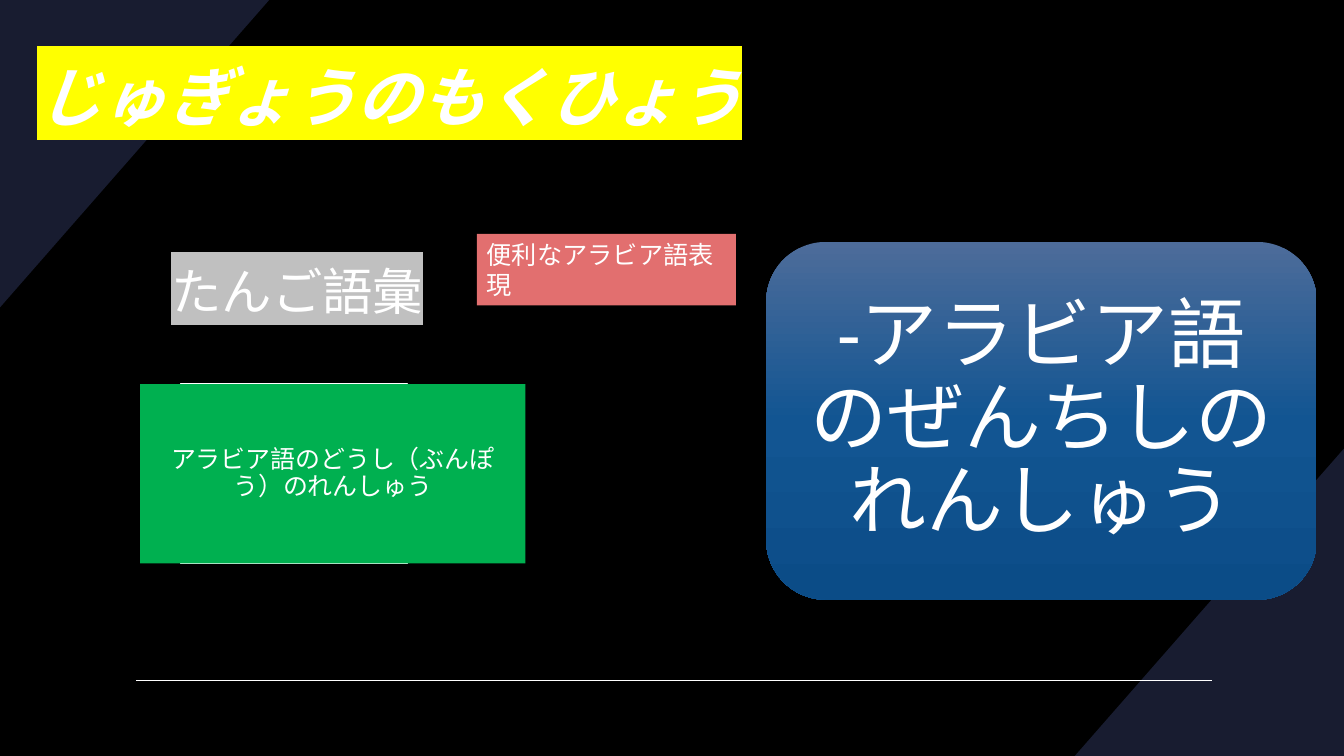
from copy import deepcopy

from lxml.etree import SubElement
from pptx import Presentation
from pptx.dml.color import RGBColor
from pptx.enum.shapes import MSO_CONNECTOR, MSO_SHAPE
from pptx.enum.text import MSO_ANCHOR, MSO_AUTO_SIZE, PP_ALIGN
from pptx.oxml.ns import qn
from pptx.util import Inches, Pt

BLACK = RGBColor(0x00, 0x00, 0x00)
WHITE = RGBColor(0xFF, 0xFF, 0xFF)
NAVY = RGBColor(0x18, 0x1C, 0x30)
GREEN = RGBColor(0x00, 0xB0, 0x50)
CORAL = RGBColor(0xE2, 0x6F, 0x6F)
YELLOW = RGBColor(0xFF, 0xFF, 0x00)
SILVER = RGBColor(0xC0, 0xC0, 0xC0)
BLUES = [(0, RGBColor(0x4D, 0x6C, 0x9A)),
         (0.5, RGBColor(0x12, 0x55, 0x92)),
         (1, RGBColor(0x0B, 0x4C, 0x87))]

GOAL = "じゅぎょうのもくひょう"
VOCABULARY = "たんご語彙"
PHRASES = "便利なアラビア語表現"
VERBS = "アラビア語のどうし（ぶんぽう）のれんしゅう"
PREPOSITIONS = "-アラビア語のぜんちしのれんしゅう"

WIDTH, HEIGHT = 13.33, 7.5
CORNER_W, CORNER_H = 2.67, 3.05

GOAL_BOX = (0.27, 0.2, 7.28, 1.59)
VOCABULARY_BOX = (1.6, 2.53, 2.96, 0.71)
PHRASES_BOX = (4.73, 2.32, 2.57, 0.71)
VERBS_BACK_BOX = (1.79, 3.81, 2.25, 1.78)
VERBS_BOX = (1.39, 3.81, 3.82, 1.78)
PREPOSITIONS_BOX = (7.6, 2.4, 5.46, 3.55)


def inches(box):
    return [Inches(length) for length in box]


def add_corner(slide, corner, along, down):
    points = [(Inches(x), Inches(y)) for x, y in (corner, along, down)]
    builder = slide.shapes.build_freeform(*points[0], scale=1.0)
    builder.add_line_segments(points[1:], close=True)
    triangle = builder.convert_to_shape()
    triangle.shadow.inherit = False
    triangle.fill.solid()
    triangle.fill.fore_color.rgb = NAVY
    triangle.line.fill.background()


def add_panel(slide, box, color=None, preset=MSO_SHAPE.RECTANGLE):
    panel = slide.shapes.add_shape(preset, *inches(box))
    panel.shadow.inherit = False
    if color is not None:
        panel.fill.solid()
        panel.fill.fore_color.rgb = color
    panel.line.fill.background()
    return panel


def write(shape, text, size, align=PP_ALIGN.LEFT, anchor=MSO_ANCHOR.TOP,
          inset=None, spacing=None):
    frame = shape.text_frame
    frame.word_wrap = True
    frame.auto_size = MSO_AUTO_SIZE.NONE
    frame.vertical_anchor = anchor
    if inset is not None:
        frame.margin_left = frame.margin_right = Inches(inset)
        frame.margin_top = frame.margin_bottom = Inches(inset)
    frame.text = text
    paragraph = frame.paragraphs[0]
    paragraph.alignment = align
    paragraph.line_spacing = spacing
    paragraph.font.name = "Calibri"
    paragraph.font.size = Pt(size)
    paragraph.font.color.rgb = WHITE
    return paragraph


def highlight(paragraph, color):
    properties = paragraph.runs[0].font._element
    marker = SubElement(properties, qn("a:highlight"))
    SubElement(marker, qn("a:srgbClr")).set("val", str(color))


def shade(panel, stops):
    """Fill the panel with a gradient running from top to bottom."""
    panel.fill.gradient()
    panel.fill.gradient_angle = 270
    first = panel.fill.gradient_stops[0]._gs
    first.addnext(deepcopy(first))
    for stop, (position, color) in zip(panel.fill.gradient_stops, stops):
        stop.position = position
        stop.color.rgb = color


def main():
    deck = Presentation()
    deck.slide_width, deck.slide_height = Inches(WIDTH), Inches(HEIGHT)
    slide = deck.slides.add_slide(deck.slide_layouts[5])
    slide.background.fill.solid()
    slide.background.fill.fore_color.rgb = BLACK

    add_corner(slide, (WIDTH, HEIGHT), (WIDTH - CORNER_W, HEIGHT),
               (WIDTH, HEIGHT - CORNER_H))
    add_corner(slide, (0, 0), (CORNER_W, 0), (0, CORNER_H))
    rule = slide.shapes.add_connector(
        MSO_CONNECTOR.STRAIGHT, *inches((1.35, 6.75, 12.02, 6.75)))
    rule.line.color.rgb = WHITE
    rule.line.width = Pt(1)
    SubElement(rule._element.spPr, qn("a:effectLst"))

    title = slide.shapes.title
    title.left, title.top, title.width, title.height = inches(GOAL_BOX)
    slide.shapes._spTree.append(title._element)
    goal = write(title, GOAL, 46, anchor=MSO_ANCHOR.MIDDLE, spacing=0.9)
    goal.space_after = Pt(6)
    goal.font.bold = goal.font.italic = True
    highlight(goal, YELLOW)

    prepositions = add_panel(slide, PREPOSITIONS_BOX,
                             preset=MSO_SHAPE.ROUNDED_RECTANGLE)
    shade(prepositions, BLUES)
    write(prepositions, PREPOSITIONS, 55, PP_ALIGN.CENTER, MSO_ANCHOR.MIDDLE,
          inset=0.23, spacing=0.9)

    verbs_back = add_panel(slide, VERBS_BACK_BOX, GREEN)
    verbs_back.line.color.rgb = WHITE
    verbs_back.line.width = Pt(1)
    verbs = add_panel(slide, VERBS_BOX, GREEN)
    write(verbs, VERBS, 17.8, PP_ALIGN.CENTER, MSO_ANCHOR.MIDDLE,
          inset=0.08, spacing=0.9)

    vocabulary = slide.shapes.add_textbox(*inches(VOCABULARY_BOX))
    highlight(write(vocabulary, VOCABULARY, 36), SILVER)
    write(add_panel(slide, PHRASES_BOX, CORAL), PHRASES, 18)

    deck.save("out.pptx")


if __name__ == "__main__":
    main()
